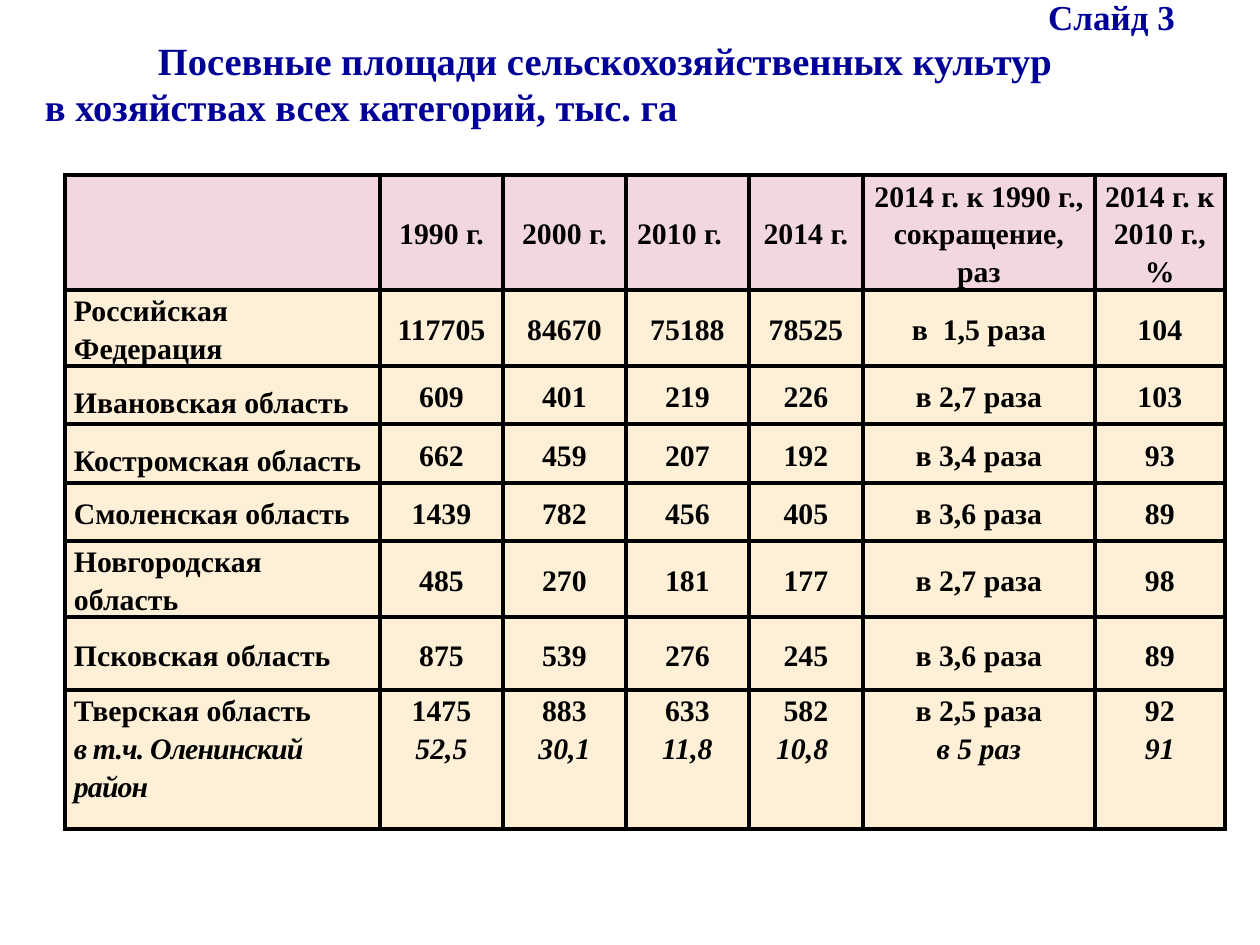
from dataclasses import dataclass

import lxml.etree
import pptx
import pptx.dml.color
import pptx.enum.text
import pptx.oxml.ns
import pptx.util

ALIGN = pptx.enum.text.PP_ALIGN
ANCHOR = pptx.enum.text.MSO_ANCHOR


@dataclass(frozen=True)
class Theme:
    font: str = "Times New Roman"
    title_color: str = "000099"
    text_color: str = "000000"
    header_fill: str = "F2D7E0"
    body_fill: str = "FEF0D7"
    border_color: str = "000000"
    border_pt: float = 2.25
    label_pt: int = 20
    title_pt: int = 22
    cell_pt: int = 17
    wrapped_line_pt: float = 21.5


THEME = Theme()

COLUMN_WIDTHS = [315, 123, 123, 123, 114, 232, 130]
ROW_HEIGHTS = [115, 76, 58, 59, 58, 76, 73, 139]
ROWS = [
    ["", "1990 г.", "2000 г.", "2010 г.", "2014 г.",
     "2014 г. к 1990 г., сокращение, раз", "2014 г. к\n2010 г., %"],
    ["Российская Федерация", "117705", "84670", "75188", "78525", "в  1,5 раза", "104"],
    ["Ивановская область", "609", "401", "219", "226", "в 2,7 раза", "103"],
    ["Костромская область", "662", "459", "207", "192", "в 3,4 раза", "93"],
    ["Смоленская область", "1439", "782", "456", "405", "в 3,6 раза", "89"],
    ["Новгородская область", "485", "270", "181", "177", "в 2,7 раза", "98"],
    ["Псковская область", "875", "539", "276", "245", "в 3,6 раза", "89"],
    ["Тверская область\nв т.ч. Оленинский район", "1475\n52,5", "883\n30,1",
     "633\n11,8", "582\n10,8 ", "в 2,5 раза\nв 5 раз", "92\n91"],
]
LOOSE_ROWS = (2, 3)
WRAPPED_ROWS = (0, 1, 5)
LAST_ROW = len(ROWS) - 1


def px(n):
    return pptx.util.Emu(round(n * 914400 / 126))


def rgb(value):
    return pptx.dml.color.RGBColor.from_string(value)


def format_runs(p, size, color, italic=False):
    for r in p.runs:
        r.font.name = THEME.font
        r.font.size = pptx.util.Pt(size)
        r.font.bold = True
        r.font.italic = italic
        r.font.color.rgb = rgb(color)


def add_title(s, left, top, width, height):
    """Slide label at the right, then the heading with an indented first line."""
    tf = s.shapes.add_textbox(px(left), px(top), px(width), px(height)).text_frame
    tf.word_wrap = True
    tf.margin_left = tf.margin_right = px(16)
    tf.margin_top = tf.margin_bottom = 0

    label = tf.paragraphs[0]
    label.text = "Слайд 3"
    label.alignment = ALIGN.RIGHT
    format_runs(label, THEME.label_pt, THEME.title_color)

    heading = tf.add_paragraph()
    heading.text = ("Посевные площади сельскохозяйственных культур\v"
                    "в хозяйствах всех категорий, тыс. га")
    heading.alignment = ALIGN.LEFT
    heading._p.get_or_add_pPr().set("indent", str(px(113)))
    format_runs(heading, THEME.title_pt, THEME.title_color)


def add_borders(cell):
    qn = pptx.oxml.ns.qn
    tc_pr = cell._tc.get_or_add_tcPr()
    for side in ("lnL", "lnR", "lnT", "lnB"):
        ln = lxml.etree.SubElement(tc_pr, qn(f"a:{side}"),
                                   w=str(pptx.util.Pt(THEME.border_pt)))
        fill = lxml.etree.SubElement(ln, qn("a:solidFill"))
        lxml.etree.SubElement(fill, qn("a:srgbClr"), val=THEME.border_color)


def line_spacing(row, col):
    if row in WRAPPED_ROWS:
        return pptx.util.Pt(THEME.wrapped_line_pt)
    return 1.5 if col == 0 and row in LOOSE_ROWS else 1.15


def fill_cell(cell, text, row, col):
    add_borders(cell)
    cell.fill.solid()
    cell.fill.fore_color.rgb = rgb(THEME.body_fill if row else THEME.header_fill)
    cell.margin_left = cell.margin_right = px(9)
    cell.margin_top = cell.margin_bottom = 0
    cell.vertical_anchor = ANCHOR.TOP if row == LAST_ROW else ANCHOR.MIDDLE
    cell.text_frame.text = text
    for i, p in enumerate(cell.text_frame.paragraphs):
        p.alignment = ALIGN.CENTER if col else ALIGN.LEFT
        p.line_spacing = line_spacing(row, col)
        district = row == LAST_ROW and i > 0
        format_runs(p, THEME.cell_pt, THEME.text_color, italic=district)
        if district and col == 0:
            for r in p.runs:
                r.font._element.set("spc", "-50")


def add_area_table(s, left, top):
    frame = s.shapes.add_table(len(ROWS), len(COLUMN_WIDTHS), px(left), px(top),
                               px(sum(COLUMN_WIDTHS)), px(sum(ROW_HEIGHTS)))
    table = frame.table
    table.first_row = table.horz_banding = False
    for column, width in zip(table.columns, COLUMN_WIDTHS):
        column.width = px(width)
    for row, (values, height) in enumerate(zip(ROWS, ROW_HEIGHTS)):
        table.rows[row].height = px(height)
        for col, text in enumerate(values):
            fill_cell(table.cell(row, col), text, row, col)
    table.cell(0, 3).margin_right = px(25)  # the 2010 heading sits left of centre


def main():
    prs = pptx.Presentation()
    prs.slide_width, prs.slide_height = px(1260), px(945)
    s = prs.slides.add_slide(prs.slide_layouts[6])
    add_title(s, 29, -5, 1162, 134)
    add_area_table(s, 65, 175)
    prs.save("out.pptx")


if __name__ == "__main__":
    main()
